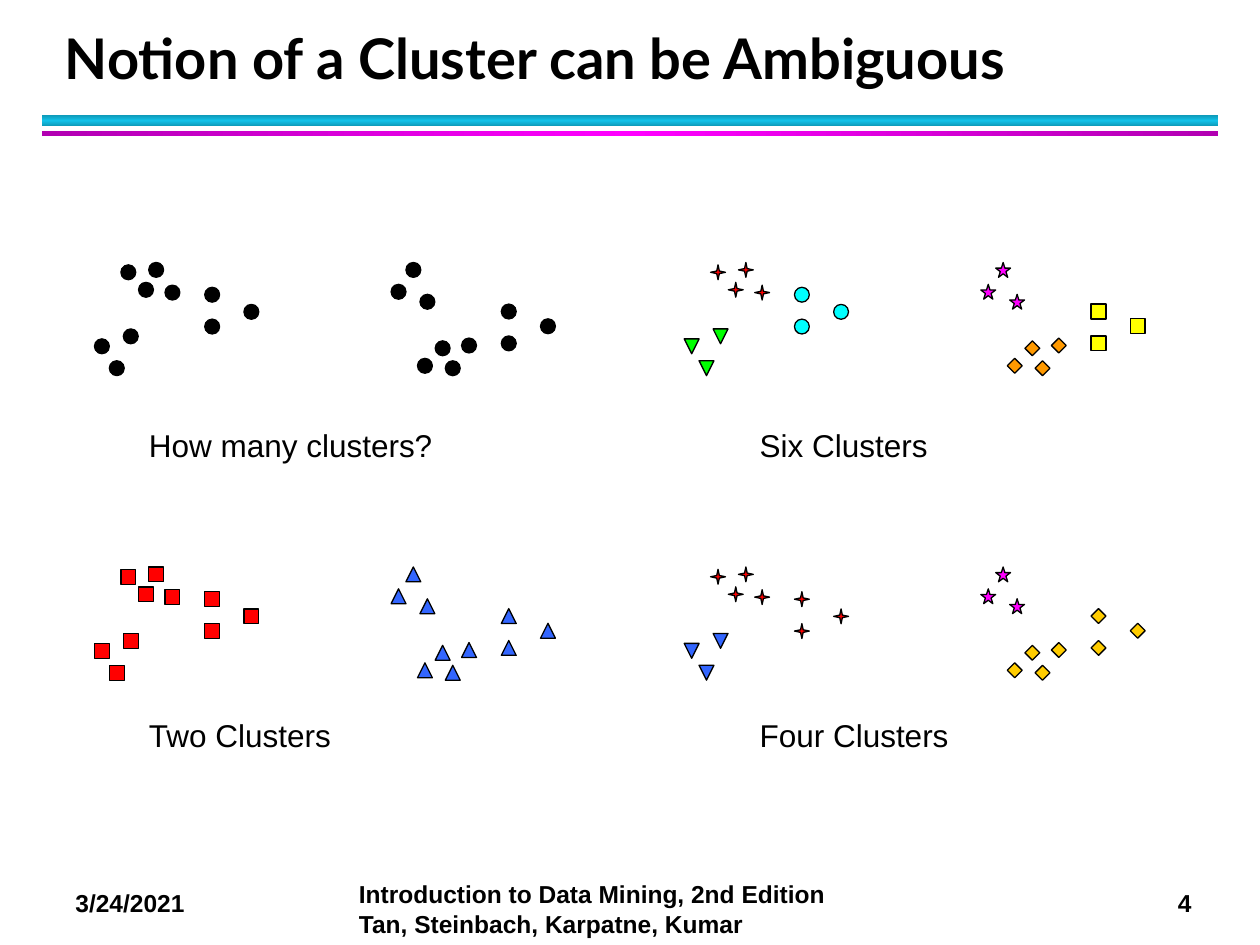
from copy import deepcopy

from pptx import Presentation
from pptx.dml.color import RGBColor
from pptx.enum.shapes import MSO_SHAPE as Shape
from pptx.enum.text import MSO_ANCHOR as Anchor
from pptx.oxml.ns import qn
from pptx.util import Pt

BLACK = RGBColor(0x00, 0x00, 0x00)
RED = RGBColor(0xFF, 0x00, 0x00)
LIME = RGBColor(0x00, 0xFF, 0x00)
CYAN = RGBColor(0x00, 0xFF, 0xFF)
MAGENTA = RGBColor(0xFF, 0x00, 0xFF)
YELLOW = RGBColor(0xFF, 0xFF, 0x00)
ORANGE = RGBColor(0xFF, 0x99, 0x00)
GOLD = RGBColor(0xFF, 0xCC, 0x00)
BLUE = RGBColor(0x33, 0x66, 0xFF)
TEAL = RGBColor(0x12, 0xC2, 0xE9)
DARK_TEAL = RGBColor(0x0E, 0x9B, 0xBA)
PURPLE = RGBColor(0xB2, 0x00, 0xB2)

MARKER_SIZE = 8.5
CLOUD_SHIFT, CLOUD_HEIGHT = 169.5, 56.2

# Marker positions in the left cloud, in points from the panel's corner
QUARTET = [(40.3, 13), (15.1, 1.4), (31, 0), (25.2, 11.4)]
LOW_TRIO = [(16.5, 38), (0, 43.7), (8.5, 56.2)]
SIDE_TRIO = [(63, 14.2), (85.4, 24), (63, 32.4)]
GROUPS = [QUARTET, LOW_TRIO, SIDE_TRIO]

DOT = (Shape.OVAL, BLACK)
SQUARE = (Shape.RECTANGLE, RED)
TRIANGLE = (Shape.ISOSCELES_TRIANGLE, BLUE)
SPARK = (Shape.STAR_4_POINT, RED)
STAR = (Shape.STAR_5_POINT, MAGENTA)
DIAMOND = (Shape.DIAMOND, GOLD)

# Caption, caption left, panel left, panel top, caption top,
# then the markers of each group in the left and the right cloud
PANELS = [
    ("How many clusters?", 78, 54, 150, 240, [DOT] * 3, [DOT] * 3),
    ("Six Clusters", 427, 391, 150, 240,
     [SPARK, (Shape.ISOSCELES_TRIANGLE, LIME), (Shape.OVAL, CYAN)],
     [(Shape.DIAMOND, ORANGE), STAR, (Shape.RECTANGLE, YELLOW)]),
    ("Two Clusters", 78, 54, 324, 405.5, [SQUARE] * 3, [TRIANGLE] * 3),
    ("Four Clusters", 427, 391, 324, 405.5,
     [SPARK, (Shape.FLOWCHART_EXTRACT, BLUE), SPARK],
     [DIAMOND, STAR, DIAMOND]),
]


class SlideBuilder:
    def __init__(self, slide, font="Arial", color=BLACK):
        self.slide = slide
        self.font = font
        self.color = color

    def text(self, box, lines, size, bold=False, font=None, wrap=True,
             anchor=Anchor.TOP, spacing=None):
        shape = self.slide.shapes.add_textbox(*map(Pt, box))
        frame = shape.text_frame
        frame.word_wrap = wrap
        frame.vertical_anchor = anchor
        paragraph = frame.paragraphs[0]
        if spacing:
            paragraph.line_spacing = Pt(spacing)
        for index, line in enumerate(lines):
            if index:
                paragraph.add_line_break()
            run = paragraph.add_run()
            run.text = line
            run.font.name = font or self.font
            run.font.size = Pt(size)
            run.font.bold = bold
            run.font.color.rgb = self.color

    def bar(self, box, edge, middle, angle):
        """Add a rule whose gradient runs from edge to middle to edge."""
        shape = self.slide.shapes.add_shape(Shape.RECTANGLE, *map(Pt, box))
        shape.shadow.inherit = False
        shape.line.fill.background()
        shape.fill.gradient()
        shape.fill.gradient_angle = angle
        stop_list = shape._element.spPr.find(qn("a:gradFill")).find(qn("a:gsLst"))
        stop_list.append(deepcopy(stop_list[0]))
        stops = zip(shape.fill.gradient_stops, (0, 0.5, 1), (edge, middle, edge))
        for stop, position, color in stops:
            stop.position = position
            stop.color.rgb = color

    def marker(self, left, top, kind, color, flipped):
        shape = self.slide.shapes.add_shape(
            kind, Pt(left), Pt(top), Pt(MARKER_SIZE), Pt(MARKER_SIZE))
        shape.shadow.inherit = False
        shape.fill.solid()
        shape.fill.fore_color.rgb = color
        shape.line.color.rgb = self.color
        shape.line.width = Pt(0.75)
        if flipped:
            shape._element.spPr.xfrm.set("flipV", "1")

    def clouds(self, left, top, left_markers, right_markers):
        """Add the left cloud and its upside-down twin on the right."""
        for points, left_marker, right_marker in zip(GROUPS, left_markers, right_markers):
            for x, y in points:
                self.marker(left + x, top + y, *left_marker, flipped=True)
                self.marker(left + x + CLOUD_SHIFT, top + CLOUD_HEIGHT - y,
                            *right_marker, flipped=False)


def main():
    presentation = Presentation()
    presentation.slide_width, presentation.slide_height = Pt(720), Pt(540)
    slide = presentation.slides.add_slide(presentation.slide_layouts[6])
    builder = SlideBuilder(slide)

    builder.bar((24, 66, 672, 6), DARK_TEAL, TEAL, 90)
    builder.bar((24, 75, 672, 3), PURPLE, MAGENTA, 0)
    builder.text((30, 12, 652, 43.5), ["Notion of a Cluster can be Ambiguous"], 32,
                 bold=True, font="Lato", anchor=Anchor.BOTTOM, spacing=36)

    for caption, caption_left, left, top, caption_top, *markers in PANELS:
        builder.clouds(left, top, *markers)
        builder.text((caption_left, caption_top, 180, 29), [caption], 18)

    builder.text((36, 504, 96, 24.5), ["3/24/2021"], 14, bold=True)
    builder.text((198, 499, 294, 41),
                 ["Introduction to Data Mining, 2nd Edition",
                  "Tan, Steinbach, Karpatne, Kumar"], 14, bold=True)
    builder.text((666, 504, 32, 24.5), ["4"], 14, bold=True, wrap=False)

    presentation.save("out.pptx")


if __name__ == "__main__":
    main()
